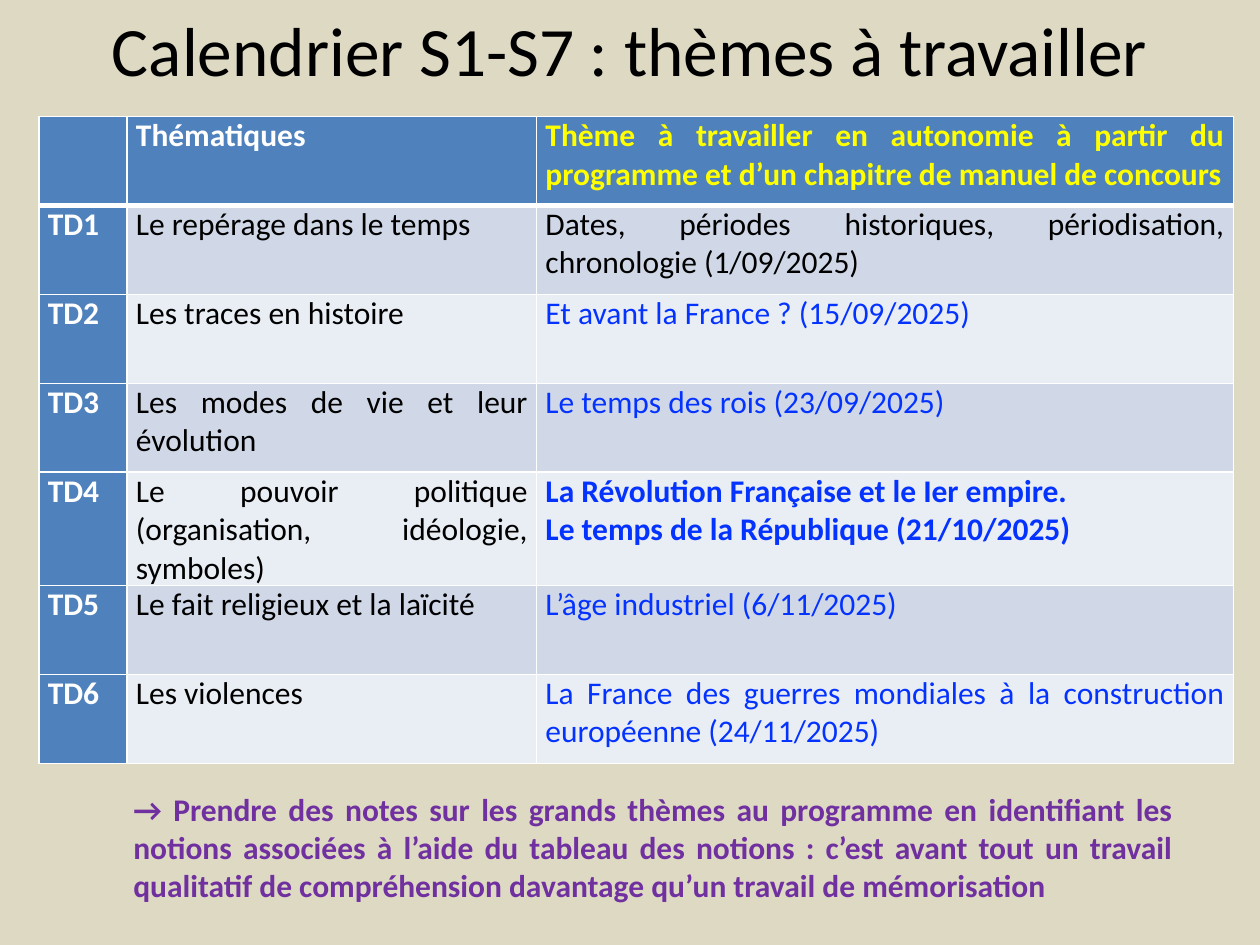
import pptx
import pptx.util
import pptx.oxml
import pptx.dml.color
import pptx.enum.text
from lxml import etree

RGB = pptx.dml.color.RGBColor
ALIGN = pptx.enum.text.PP_ALIGN
ANCHOR = pptx.enum.text.MSO_ANCHOR

SAND = RGB(0xDD, 0xD9, 0xC3)
BLACK = RGB(0x00, 0x00, 0x00)
WHITE = RGB(0xFF, 0xFF, 0xFF)
YELLOW = RGB(0xFF, 0xFF, 0x00)
BLUE = RGB(0x04, 0x32, 0xFF)
PURPLE = RGB(0x70, 0x30, 0xA0)
HEADER = RGB(0x4F, 0x81, 0xBD)
BANDS = (RGB(0xD0, 0xD8, 0xE8), RGB(0xE9, 0xED, 0xF4))

FONT = "Calibri"
WIDTH, HEIGHT = pptx.util.Inches(10), pptx.util.Inches(7.5)
GRID_COLS, GRID_ROWS = 100, 75

TITLE = "Calendrier S1-S7 : thèmes à travailler"
HEADINGS = (
    "",
    "Thématiques",
    "Thème à travailler en autonomie à partir du programme et d’un chapitre de manuel de concours",
)
SESSIONS = [
    ("Le repérage dans le temps",
     "Dates, périodes historiques, périodisation, chronologie (1/09/2025)"),
    ("Les traces en histoire", "Et avant la France ? (15/09/2025)"),
    ("Les modes de vie et leur évolution", "Le temps des rois (23/09/2025)"),
    ("Le pouvoir politique (organisation, idéologie, symboles)",
     "La Révolution Française et le Ier empire.\nLe temps de la République (21/10/2025)"),
    ("Le fait religieux et la laïcité", "L’âge industriel (6/11/2025)"),
    ("Les violences",
     "La France des guerres mondiales à la construction européenne (24/11/2025)"),
]
NOTE = (
    "→ Prendre des notes sur les grands thèmes au programme en identifiant les notions "
    "associées à l’aide du tableau des notions : c’est avant tout un travail qualitatif "
    "de compréhension davantage qu’un travail de mémorisation"
)


def grid_box(col, row, cols, rows):
    """Return left, top, width and height of a block of the slide grid."""
    return (int(WIDTH * col / GRID_COLS), int(HEIGHT * row / GRID_ROWS),
            int(WIDTH * cols / GRID_COLS), int(HEIGHT * rows / GRID_ROWS))


def write(tf, text, color, size=18, bold=False, align=ALIGN.JUSTIFY):
    """Fill a text frame with evenly styled paragraphs."""
    tf.word_wrap = True
    tf.text = text
    for p in tf.paragraphs:
        p.alignment = align
        p.font.name = FONT
        p.font.size = pptx.util.Pt(size)
        p.font.bold = bold
        p.font.color.rgb = color


def set_borders(cell, top=1, bottom=1):
    """Draw white lines around a table cell, with widths in points."""
    tcPr = cell._tc.get_or_add_tcPr()
    widths = {"lnL": 1, "lnR": 1, "lnT": top, "lnB": bottom}
    for i, (tag, width) in enumerate(widths.items()):
        ln = etree.Element(pptx.oxml.ns.qn(f"a:{tag}"), w=str(pptx.util.Pt(width)))
        fill = etree.SubElement(ln, pptx.oxml.ns.qn("a:solidFill"))
        etree.SubElement(fill, pptx.oxml.ns.qn("a:srgbClr"), val=str(WHITE))
        tcPr.insert(i, ln)


def cell_style(row, col):
    """Return the fill, text colour and weight of a calendar cell."""
    if row == 0:
        return HEADER, YELLOW if col == 2 else WHITE, True
    if col == 0:
        return HEADER, WHITE, True
    color = BLUE if col == 2 and row > 1 else BLACK
    return BANDS[(row - 1) % 2], color, (row, col) == (4, 2)


def add_title(s, box):
    """Place the centred slide title."""
    tf = s.shapes.add_textbox(*box).text_frame
    tf.vertical_anchor = ANCHOR.MIDDLE
    write(tf, TITLE, BLACK, size=39.6, align=ALIGN.CENTER)


def add_calendar(s, box, col_shares):
    """Place the calendar table, sharing out the width between its columns."""
    rows = [HEADINGS] + [(f"TD{i}", *texts) for i, texts in enumerate(SESSIONS, 1)]
    table = s.shapes.add_table(len(rows), len(HEADINGS), *box).table
    for column, share in zip(table.columns, col_shares):
        column.width = int(box[2] * share / sum(col_shares))
    for r, texts in enumerate(rows):
        for c, text in enumerate(texts):
            cell = table.cell(r, c)
            fill, color, bold = cell_style(r, c)
            cell.margin_left = cell.margin_right = pptx.util.Inches(0.07)
            cell.margin_top = cell.margin_bottom = 0
            cell.fill.solid()
            cell.fill.fore_color.rgb = fill
            set_borders(cell, top=3 if r == 1 else 1, bottom=3 if r == 0 else 1)
            write(cell.text_frame, text, color, bold=bold)


def add_note(s, box):
    """Place the closing advice under the table."""
    write(s.shapes.add_textbox(*box).text_frame, NOTE, PURPLE, bold=True)


def main():
    """Build and save the calendar slide."""
    prs = pptx.Presentation()
    prs.slide_width, prs.slide_height = WIDTH, HEIGHT
    s = prs.slides.add_slide(prs.slide_layouts[6])
    s.background.fill.solid()
    s.background.fill.fore_color.rgb = SAND
    add_title(s, grid_box(5, 0, 90, 7.7))
    add_calendar(s, grid_box(3.1, 9.25, 94.8, 49.4), (0.7, 3.25, 5.53))
    add_note(s, grid_box(9.6, 62.2, 84.5, 10.1))
    prs.save("out.pptx")


if __name__ == "__main__":
    main()
